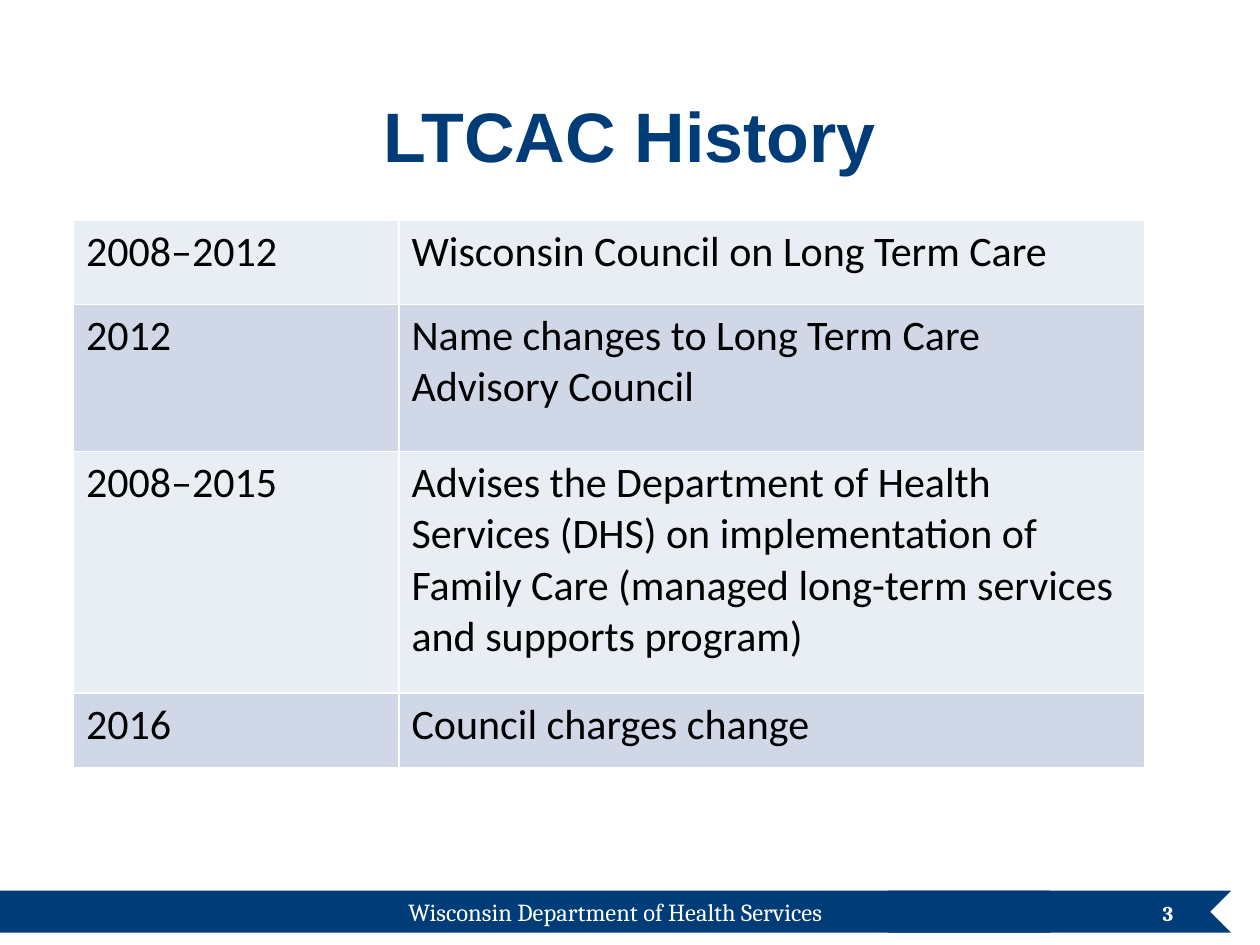
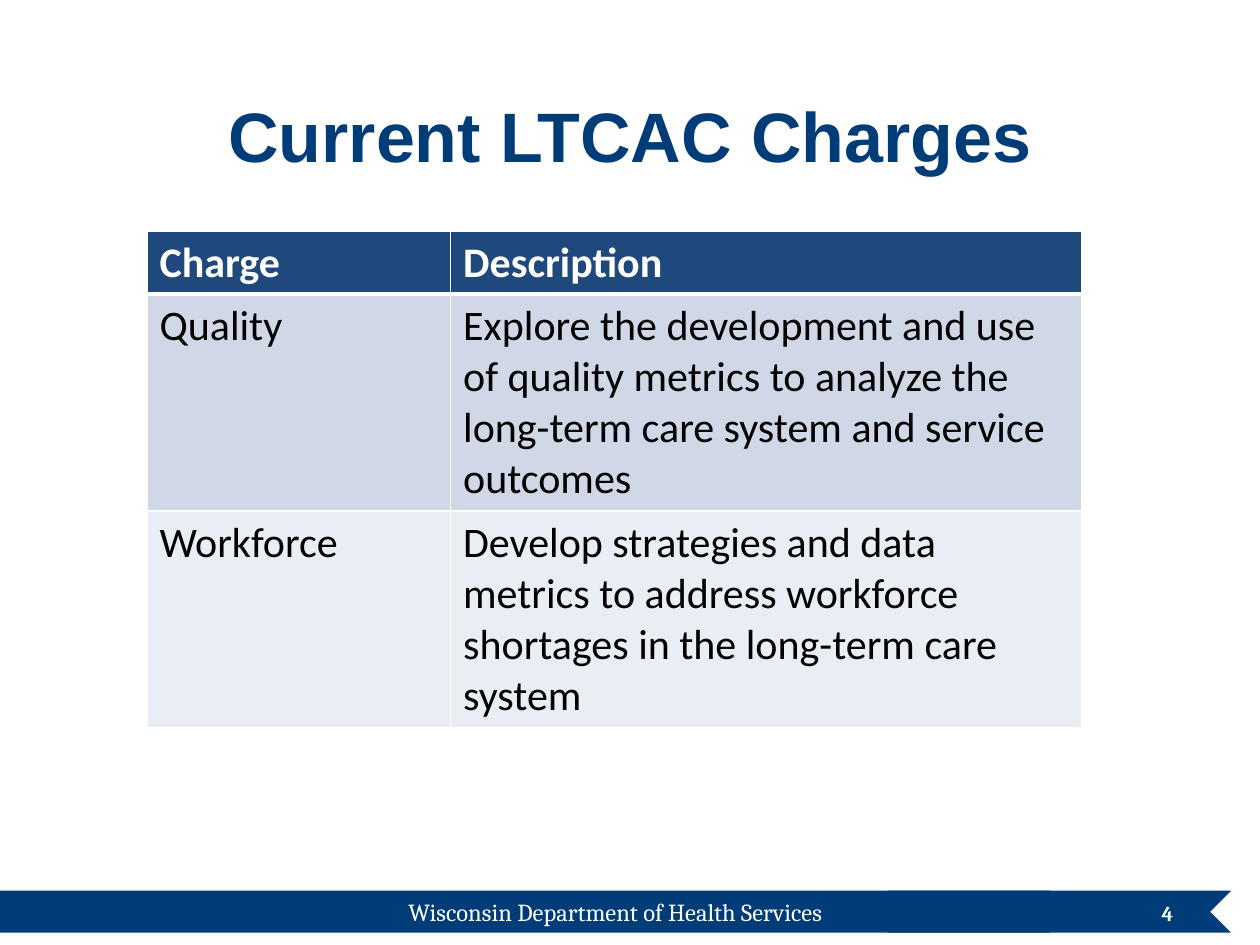
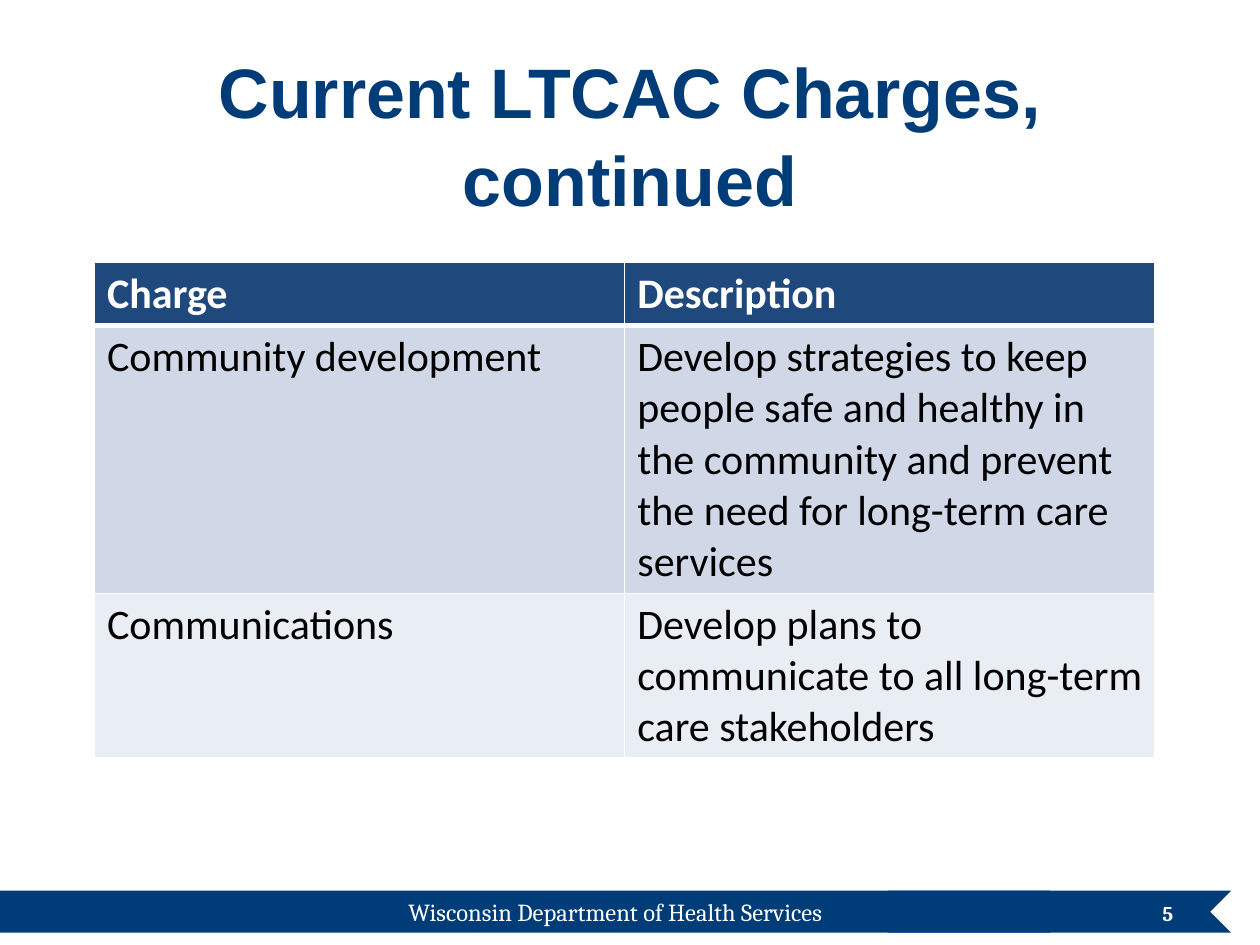
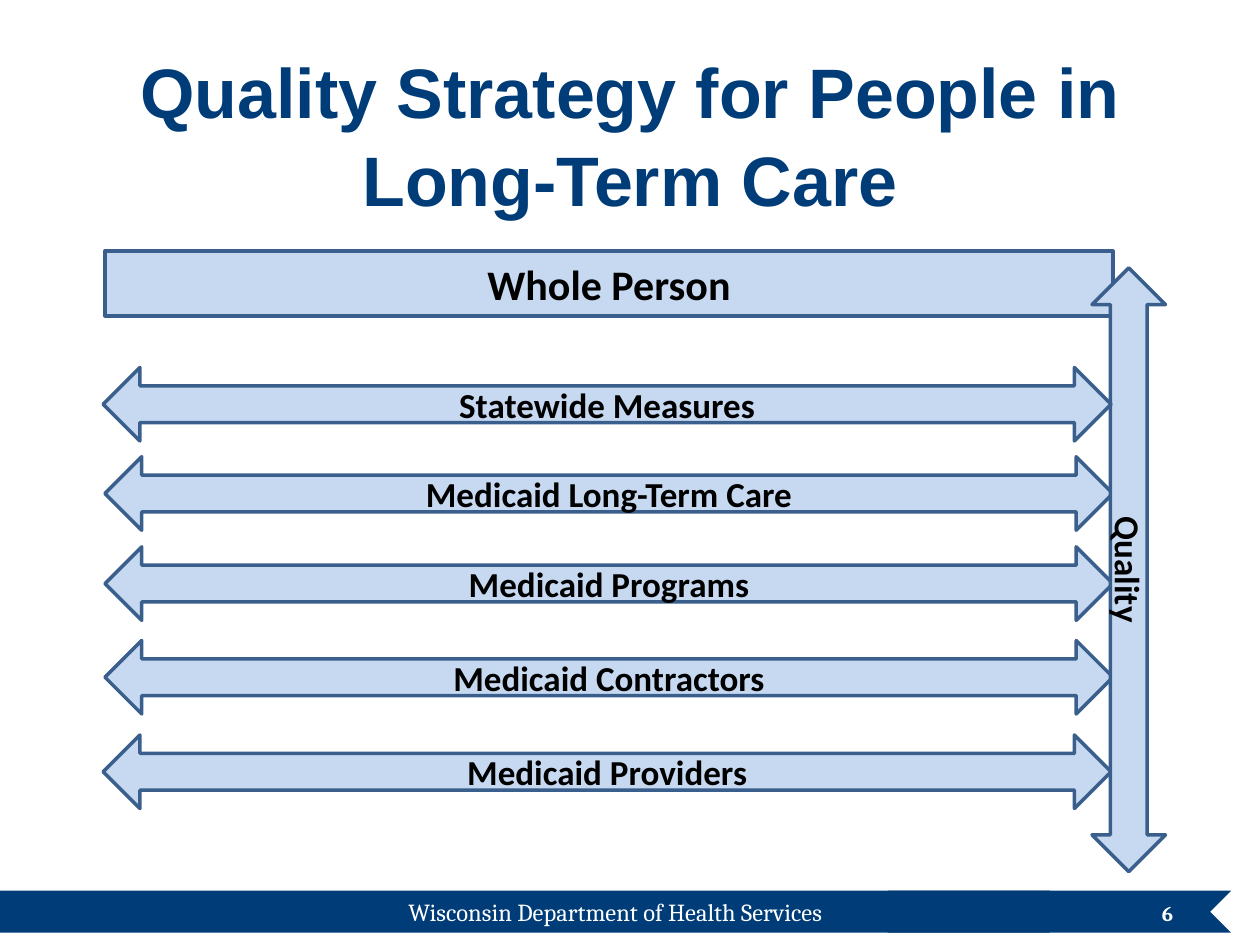
from lxml.etree import SubElement
from pptx import Presentation
from pptx.dml.color import RGBColor
from pptx.enum.shapes import MSO_SHAPE as Shape
from pptx.enum.text import MSO_ANCHOR as Anchor, PP_ALIGN as Align
from pptx.oxml.ns import qn
from pptx.util import Pt

NAVY, HEADER_BLUE, WHITE, BLACK = "003D78", "1F497D", "FFFFFF", "000000"
PALE, MEDIUM = "E9EDF4", "D0D8E8"
ARROW_FILL, ARROW_LINE = "C6D9F1", "3A5F8C"
CHARGE_FILLS = [HEADER_BLUE, MEDIUM, PALE]
FIRST_PAGE = 3

rgb = RGBColor.from_string


def write(frame, text, font, size, color, bold=False, align=Align.LEFT):
    frame.word_wrap = True
    line = frame.paragraphs[0]
    line.alignment = align
    run = line.add_run()
    run.text = text
    run.font.name, run.font.size, run.font.bold = font, Pt(size), bold
    run.font.color.rgb = rgb(color)
    return line


def add_filled(slide, kind, place, fill, outline=None):
    shape = slide.shapes.add_shape(kind, *map(Pt, place))
    shape.shadow.inherit = False
    shape.fill.solid()
    shape.fill.fore_color.rgb = rgb(fill)
    if outline:
        shape.line.color.rgb = rgb(outline)
        shape.line.width = Pt(2)
    else:
        shape.line.fill.background()
    return shape


deck = Presentation()
deck.slide_width, deck.slide_height = Pt(720), Pt(540)

# Title, footer band and page number of every slide
titles = [
    "LTCAC History",
    "Current LTCAC Charges",
    "Current LTCAC Charges, continued",
    "Quality Strategy for People in Long-Term Care",
]
slides = []
for page, title in enumerate(titles, FIRST_PAGE):
    slide = deck.slides.add_slide(deck.slide_layouts[6])
    slides.append(slide)

    ribbon_end = add_filled(slide, Shape.CHEVRON, (495.5, 509, 208, 24), NAVY)
    ribbon_end.rotation = 180
    add_filled(slide, Shape.RECTANGLE, (0, 509, 600, 24), NAVY)

    department = slide.shapes.add_textbox(Pt(0), Pt(509), Pt(703.5), Pt(24.5))
    write(department.text_frame, "Wisconsin Department of Health Services",
          "Cambria", 14, WHITE, align=Align.CENTER)

    page_number = slide.shapes.add_textbox(Pt(510), Pt(507), Pt(167.5), Pt(29))
    page_number.text_frame.vertical_anchor = Anchor.MIDDLE
    write(page_number.text_frame, str(page), "Cambria", 12, WHITE, True, Align.RIGHT)

    heading = slide.shapes.add_textbox(Pt(36), Pt(15.5), Pt(648), Pt(120))
    heading.text_frame.vertical_anchor = Anchor.MIDDLE
    heading_line = write(heading.text_frame, title, "Arial", 40, NAVY, True, Align.CENTER)
    heading_line.line_spacing = 1.05

# Tables: slide, left, top, column widths, row heights, row fills, rows
tables = [
    (slides[0], 42, 126, [186, 426], [48, 84, 138, 43], [PALE, MEDIUM, PALE, MEDIUM], [
        ("2008–2012", "Wisconsin Council on Long Term Care"),
        ("2012", "Name changes to Long Term Care Advisory Council"),
        ("2008–2015", "Advises the Department of Health Services (DHS) on implementation of "
                      "Family Care (managed long-term services and supports program)"),
        ("2016", "Council charges change"),
    ]),
    (slides[1], 84, 132, [173.5, 360.5], [36, 124, 124], CHARGE_FILLS, [
        ("Charge", "Description"),
        ("Quality", "Explore the development and use of quality metrics to analyze the "
                    "long-term care system and service outcomes"),
        ("Workforce", "Develop strategies and data metrics to address workforce shortages "
                      "in the long-term care system"),
    ]),
    (slides[2], 54, 150, [303, 303], [36, 153, 94], CHARGE_FILLS, [
        ("Charge", "Description"),
        ("Community development", "Develop strategies to keep people safe and healthy in the "
                                  "community and prevent the need for long-term care services"),
        ("Communications", "Develop plans to communicate to all long-term care stakeholders"),
    ]),
]
for slide, left, top, widths, heights, fills, rows in tables:
    table = slide.shapes.add_table(len(rows), len(widths), Pt(left), Pt(top),
                                   Pt(sum(widths)), Pt(sum(heights))).table
    table.first_row = fills[0] == HEADER_BLUE
    table.horz_banding = False
    for column, width in zip(table.columns, widths):
        column.width = Pt(width)
    for r, (height, fill, texts) in enumerate(zip(heights, fills, rows)):
        table.rows[r].height = Pt(height)
        is_header = fill == HEADER_BLUE
        below_header = r > 0 and fills[r - 1] == HEADER_BLUE
        edges = {"lnL": 1, "lnR": 1, "lnT": 3 if below_header else 1,
                 "lnB": 3 if is_header else 1}
        for c, text in enumerate(texts):
            cell = table.cell(r, c)
            properties = cell._tc.get_or_add_tcPr()
            for edge, weight in edges.items():
                border = SubElement(properties, qn(f"a:{edge}"), w=str(Pt(weight)))
                paint = SubElement(border, qn("a:solidFill"))
                SubElement(paint, qn("a:srgbClr"), val=WHITE)
            cell.fill.solid()
            cell.fill.fore_color.rgb = rgb(fill)
            write(cell.text_frame, text, "Calibri", 24,
                  WHITE if is_header else BLACK, is_header)

# Quality strategy: levels of measurement, from back to front
levels = [
    ("Medicaid Long-Term Care", Shape.LEFT_RIGHT_ARROW, (60, 261, 576, 42), 20, 0),
    ("Whole Person", Shape.RECTANGLE, (60, 143.5, 576, 37), 24, 0),
    ("Medicaid Programs", Shape.LEFT_RIGHT_ARROW, (60, 312.5, 576, 42), 20, 0),
    ("Medicaid Contractors", Shape.LEFT_RIGHT_ARROW, (60, 366, 576, 42), 20, 0),
    ("Medicaid Providers", Shape.LEFT_RIGHT_ARROW, (59, 420, 576, 42), 20, 0),
    ("Quality", Shape.LEFT_RIGHT_ARROW, (472.5, 304.5, 345, 42), 20, 90),
    ("Statewide Measures", Shape.LEFT_RIGHT_ARROW, (59, 210, 576, 42), 20, 0),
]
for label, kind, place, size, angle in levels:
    level = add_filled(slides[3], kind, place, ARROW_FILL, ARROW_LINE)
    level.rotation = angle
    level.text_frame.vertical_anchor = Anchor.MIDDLE
    write(level.text_frame, label, "Calibri", size, BLACK, True, Align.CENTER)

deck.save("out.pptx")
